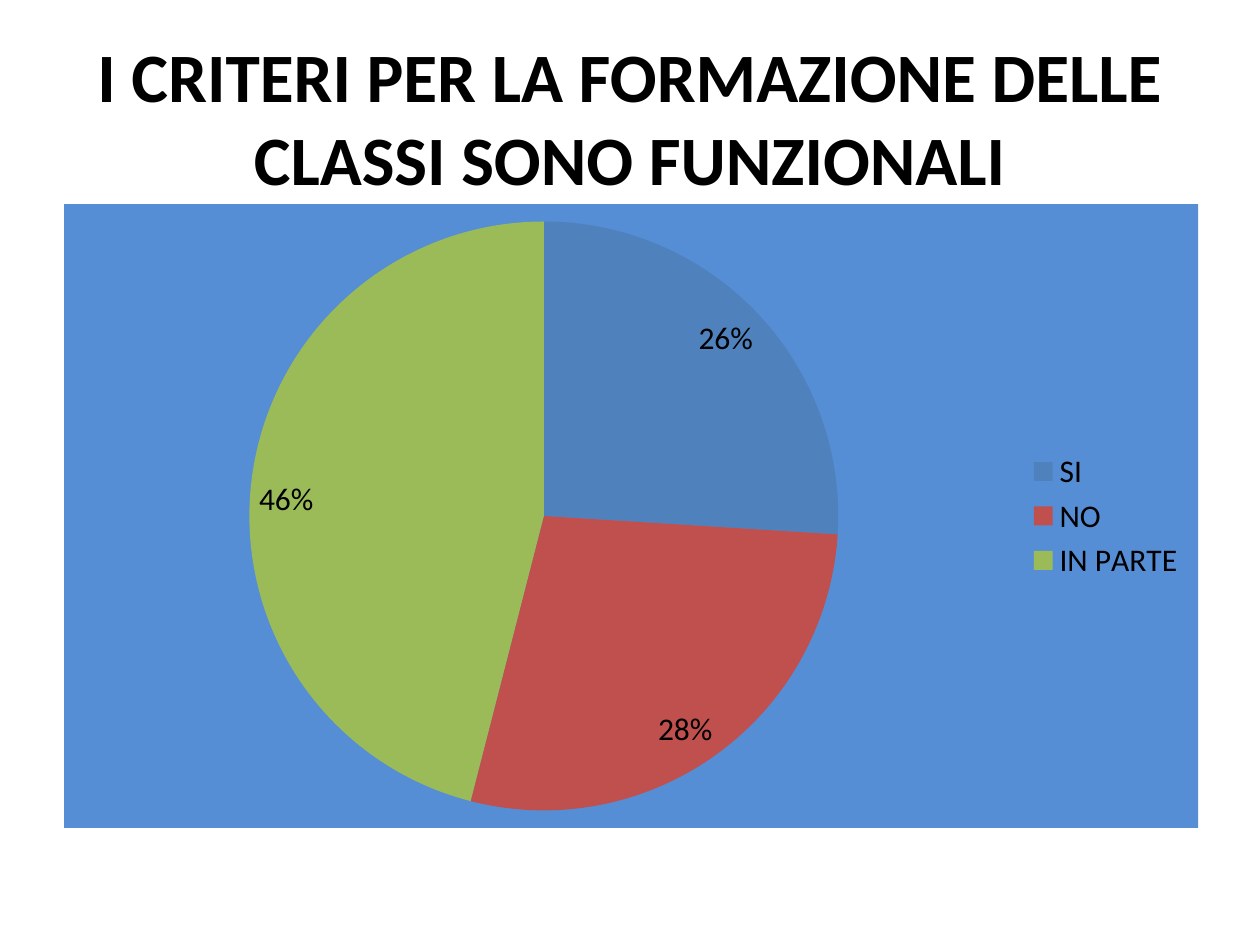
from lxml import etree
from pptx import Presentation
from pptx.chart.data import CategoryChartData
from pptx.dml.color import RGBColor
from pptx.enum.chart import XL_CHART_TYPE, XL_LABEL_POSITION, XL_LEGEND_POSITION
from pptx.enum.text import MSO_ANCHOR, PP_ALIGN
from pptx.oxml import parse_xml
from pptx.util import Inches, Pt

PIE = XL_CHART_TYPE.PIE
INSIDE_END = XL_LABEL_POSITION.INSIDE_END
LEGEND_RIGHT = XL_LEGEND_POSITION.RIGHT
MIDDLE = MSO_ANCHOR.MIDDLE
CENTER = PP_ALIGN.CENTER

COLORS = {
    "text": "000000",
    "chart": "558ED5",
    "SI": "4F81BD",
    "NO": "C0504D",
    "IN PARTE": "9BBB59",
}
ANSWERS = {"SI": 0.26, "NO": 0.28, "IN PARTE": 0.46}
TITLE_FONT = {"name": "Calibri", "size": Pt(39.6), "bold": True}
CHART_FONT = {"name": "Calibri", "size": Pt(18), "bold": False}
CHART_NS = "http://schemas.openxmlformats.org/drawingml/2006/chart"
DRAWING_NS = "http://schemas.openxmlformats.org/drawingml/2006/main"


def color(name):
    return RGBColor.from_string(COLORS[name])


def format_font(font, values):
    for name, value in values.items():
        setattr(font, name, value)
    font.color.rgb = color("text")


def add_title(page, text):
    box = page.shapes.add_textbox(Inches(0.5), Inches(0.3), Inches(9), Inches(1.25))
    frame = box.text_frame
    frame.word_wrap = True
    frame.vertical_anchor = MIDDLE
    para = frame.paragraphs[0]
    para.alignment = CENTER
    span = para.add_run()
    span.text = text
    format_font(span.font, TITLE_FONT)


def fill_chart_area(chart, name):
    properties = parse_xml(f'<c:spPr xmlns:c="{CHART_NS}" xmlns:a="{DRAWING_NS}"/>')
    fill = etree.SubElement(properties, f"{{{DRAWING_NS}}}solidFill")
    etree.SubElement(fill, f"{{{DRAWING_NS}}}srgbClr", val=COLORS[name])
    line = etree.SubElement(properties, f"{{{DRAWING_NS}}}ln")
    etree.SubElement(line, f"{{{DRAWING_NS}}}noFill")
    chart.element.find(f"{{{CHART_NS}}}chart").addnext(properties)


def add_pie(page, answers):
    data = CategoryChartData(number_format="0%")
    data.categories = list(answers)
    data.add_series("Series 1", list(answers.values()))
    chart = page.shapes.add_chart(
        PIE, Inches(0.51), Inches(1.62), Inches(9), Inches(4.95), data
    ).chart
    chart.has_title = False
    format_font(chart.font, CHART_FONT)
    fill_chart_area(chart, "chart")

    chart.has_legend = True
    chart.legend.position = LEGEND_RIGHT
    chart.legend.include_in_layout = False

    plot = chart.plots[0]
    plot.vary_by_categories = True
    for index, answer in enumerate(answers):
        fill = plot.series[0].points[index].format.fill
        fill.solid()
        fill.fore_color.rgb = color(answer)

    plot.has_data_labels = True
    labels = plot.data_labels
    label_format = {
        "show_value": True,
        "show_percentage": False,
        "number_format": "0%",
        "number_format_is_linked": False,
        "position": INSIDE_END,
    }
    for name, value in label_format.items():
        setattr(labels, name, value)
    format_font(labels.font, CHART_FONT)


def main():
    deck = Presentation()
    deck.slide_width = Inches(10)
    deck.slide_height = Inches(7.5)
    page = deck.slides.add_slide(deck.slide_layouts[6])
    add_title(page, "I CRITERI PER LA FORMAZIONE DELLE CLASSI SONO FUNZIONALI")
    add_pie(page, ANSWERS)
    deck.save("out.pptx")


if __name__ == "__main__":
    main()
